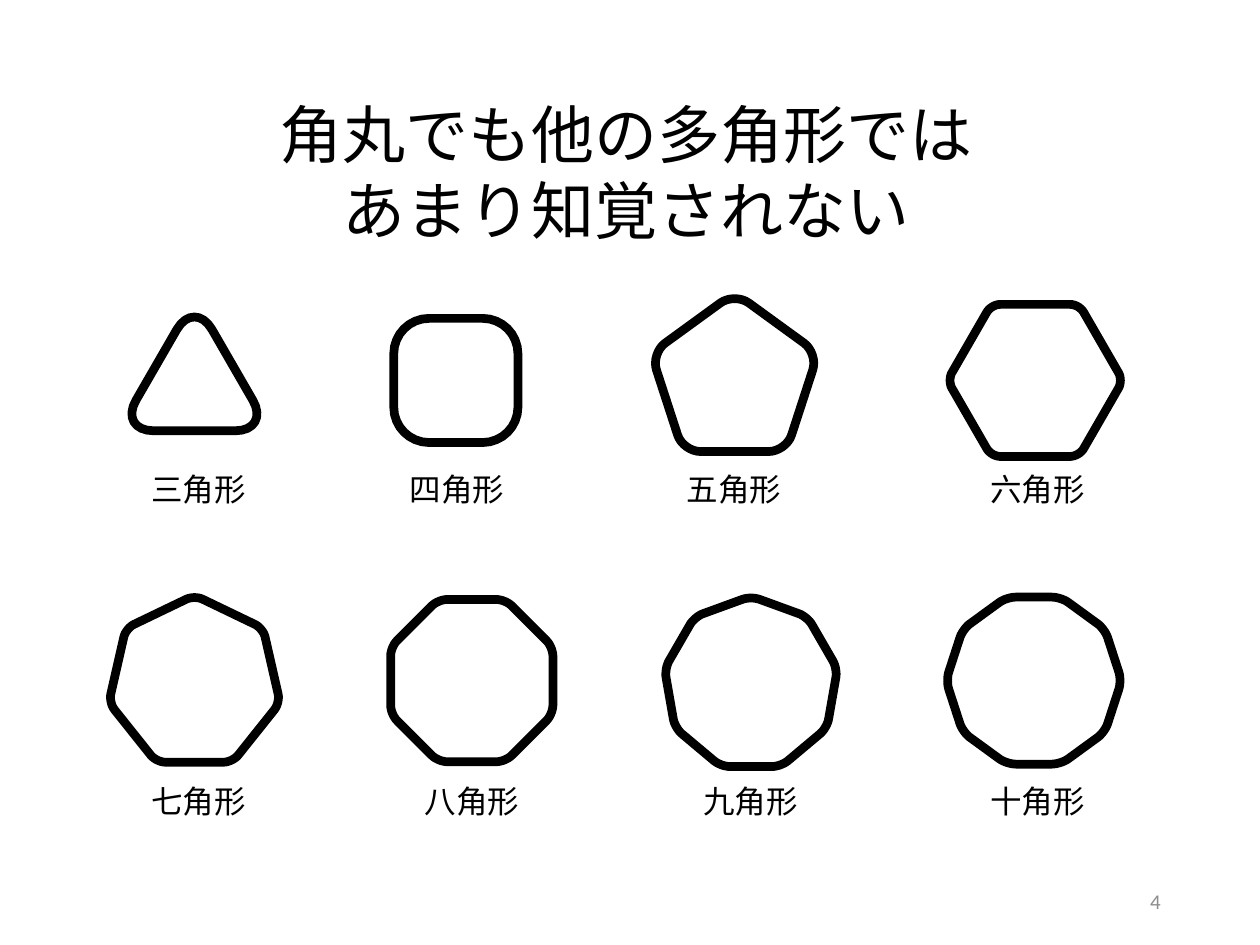
"""Build a slide comparing rounded polygons from three to ten sides."""

from dataclasses import dataclass
from math import cos, pi, sin, tau

from lxml.etree import SubElement
from pptx import Presentation
from pptx.dml.color import RGBColor
from pptx.enum.text import MSO_ANCHOR, MSO_AUTO_SIZE, PP_ALIGN
from pptx.oxml.ns import qn
from pptx.slide import Slide
from pptx.text.text import TextFrame
from pptx.util import Cm, Pt


@dataclass(frozen=True)
class Theme:
    """Colours, fonts and type sizes of the slide."""

    ink: RGBColor = RGBColor(0x00, 0x00, 0x00)
    muted: RGBColor = RGBColor(0x8C, 0x8C, 0x8C)
    latin_font: str = "Calibri"
    label_font: str = "Noto Sans CJK JP"
    title_size: int = 36
    label_size: int = 18
    number_size: int = 12
    outline_width: int = 5


@dataclass(frozen=True)
class Polygon:
    """A rounded regular polygon and its label, in centimetres."""

    name: str
    sides: int
    center_x: float
    center_y: float
    corner_cut: float
    label_x: float
    label_top: float


THEME = Theme()
RADIUS = 1.77
CURVE_STEPS = 8
CURVE_HANDLE = 0.55
LABEL_WIDTH, LABEL_HEIGHT = 3.53, 1.02
TOP_LABELS, BOTTOM_LABELS = 9.35, 15.65

POLYGONS = (
    Polygon("三角形", 3, 3.92, 7.8, 0.71, 4.0, TOP_LABELS),
    Polygon("四角形", 4, 9.19, 7.67, 0.71, 9.21, TOP_LABELS),
    Polygon("五角形", 5, 14.81, 7.67, 0.35, 14.8, TOP_LABELS),
    Polygon("六角形", 6, 20.87, 7.67, 0.18, 20.92, TOP_LABELS),
    Polygon("七角形", 7, 3.92, 13.77, 0.18, 4.0, BOTTOM_LABELS),
    Polygon("八角形", 8, 9.51, 13.72, 0.18, 9.52, BOTTOM_LABELS),
    Polygon("九角形", 9, 15.14, 13.79, 0.18, 15.13, BOTTOM_LABELS),
    Polygon("十角形", 10, 20.84, 13.72, 0.18, 20.92, BOTTOM_LABELS),
)


def toward(start: complex, end: complex, share: float) -> complex:
    """Return the point at the given share of the way from start to end."""
    return start + (end - start) * share


def rounded_outline(polygon: Polygon) -> list[complex]:
    """Return outline points, with each corner drawn as a cubic curve."""
    center = complex(polygon.center_x, polygon.center_y)
    angles = [pi / 2 + (index + 0.5) * tau / polygon.sides for index in range(polygon.sides)]
    corners = [center + RADIUS * complex(cos(angle), sin(angle)) for angle in angles]
    cut_share = polygon.corner_cut / (2 * RADIUS * sin(pi / polygon.sides))
    points = []
    for index, corner in enumerate(corners):
        start = toward(corner, corners[index - 1], cut_share)
        end = toward(corner, corners[(index + 1) % polygon.sides], cut_share)
        first_handle = toward(start, corner, CURVE_HANDLE)
        second_handle = toward(end, corner, CURVE_HANDLE)
        for step in range(CURVE_STEPS + 1):
            share = step / CURVE_STEPS
            rest = 1 - share
            points.append(
                rest**3 * start
                + 3 * rest**2 * share * first_handle
                + 3 * rest * share**2 * second_handle
                + share**3 * end
            )
    return points


def format_text(frame: TextFrame, font: str, size: int, color: RGBColor, alignment: PP_ALIGN) -> None:
    """Apply one font, size, colour and alignment to all text in a frame."""
    for paragraph in frame.paragraphs:
        paragraph.alignment = alignment
        for run in paragraph.runs:
            run.font.size = Pt(size)
            run.font.color.rgb = color
            run.font.name = font
            SubElement(run.font._element, qn("a:ea"), typeface=font)


def add_title(slide: Slide, text: str) -> None:
    """Fill and place the title placeholder."""
    title = slide.shapes.title
    title.left, title.top, title.width, title.height = Cm(1.68), Cm(1.8), Cm(21.89), Cm(3.33)
    frame = title.text_frame
    frame.text = text
    frame.auto_size = MSO_AUTO_SIZE.SHAPE_TO_FIT_TEXT
    frame.vertical_anchor = MSO_ANCHOR.TOP
    format_text(frame, THEME.latin_font, THEME.title_size, THEME.ink, PP_ALIGN.CENTER)


def add_polygon(slide: Slide, polygon: Polygon) -> None:
    """Draw a rounded polygon as an unfilled outline."""
    points = [(Cm(point.real), Cm(point.imag)) for point in rounded_outline(polygon)]
    builder = slide.shapes.build_freeform(*points[0], scale=1.0)
    builder.add_line_segments(points[1:], close=True)
    shape = builder.convert_to_shape()
    shape.shadow.inherit = False
    shape.fill.background()
    shape.line.color.rgb = THEME.ink
    shape.line.width = Pt(THEME.outline_width)


def add_label(slide: Slide, polygon: Polygon) -> None:
    """Write the name of a polygon below it."""
    left = polygon.label_x - LABEL_WIDTH / 2
    box = slide.shapes.add_textbox(Cm(left), Cm(polygon.label_top), Cm(LABEL_WIDTH), Cm(LABEL_HEIGHT))
    frame = box.text_frame
    frame.word_wrap = True
    frame.auto_size = MSO_AUTO_SIZE.SHAPE_TO_FIT_TEXT
    frame.text = polygon.name
    format_text(frame, THEME.label_font, THEME.label_size, THEME.ink, PP_ALIGN.CENTER)


def add_slide_number(slide: Slide, number: str) -> None:
    """Write the slide number at the bottom right."""
    box = slide.shapes.add_textbox(Cm(17.93), Cm(17.65), Cm(5.72), Cm(1.02))
    frame = box.text_frame
    frame.word_wrap = True
    frame.vertical_anchor = MSO_ANCHOR.MIDDLE
    frame.text = number
    format_text(frame, THEME.latin_font, THEME.number_size, THEME.muted, PP_ALIGN.RIGHT)


def main() -> None:
    """Build and save the presentation."""
    presentation = Presentation()
    presentation.slide_width, presentation.slide_height = Cm(25.4), Cm(19.05)
    slide = presentation.slides.add_slide(presentation.slide_layouts[5])
    add_title(slide, "角丸でも他の多角形では\nあまり知覚されない")
    for polygon in POLYGONS:
        add_polygon(slide, polygon)
        add_label(slide, polygon)
    add_slide_number(slide, "4")
    presentation.save("out.pptx")


if __name__ == "__main__":
    main()
